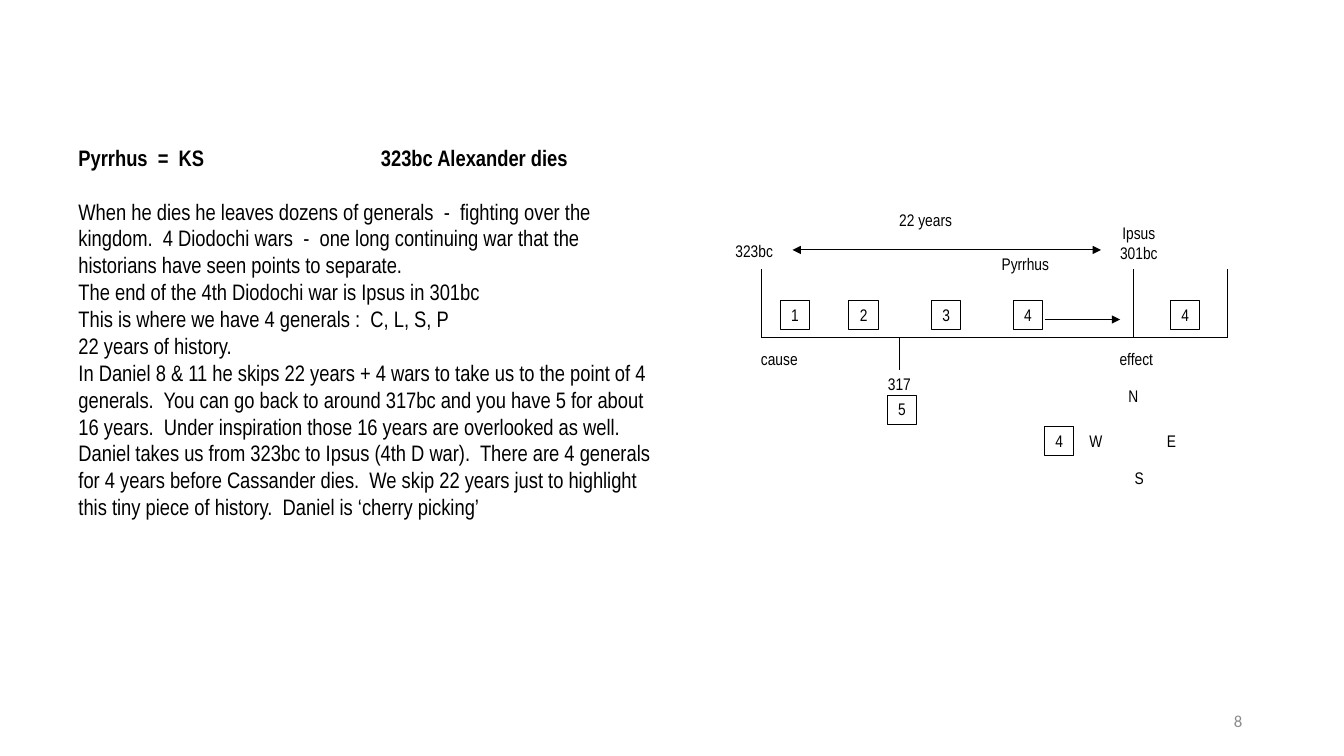
from dataclasses import dataclass

from lxml import etree
from pptx import Presentation
from pptx import util as u
from pptx.dml.color import RGBColor
from pptx.enum import shapes, text
from pptx.oxml import ns


@dataclass(frozen=True)
class Theme:
    ink: str = "000000"
    muted: str = "8C8C8C"
    font: str = "Arial Narrow"
    number_font: str = "Calibri"
    body_size: float = 16
    label_size: float = 12
    line_width: float = 0.75
    inset: float = 0.04


THEME = Theme()
SLIDE_W, SLIDE_H = 13.33, 7.5
HEADING = "Pyrrhus  =  KS\t323bc Alexander dies"
NOTES = [
    "When he dies he leaves dozens of generals  -  fighting over the kingdom.  "
    "4 Diodochi wars  -  one long continuing war that the historians have seen "
    "points to separate.",
    "The end of the 4th Diodochi war is Ipsus in 301bc",
    "This is where we have 4 generals :  C, L, S, P",
    "22 years of history.",
    "In Daniel 8 & 11 he skips 22 years + 4 wars to take us to the point of "
    "4 generals.  You can go back to around 317bc and you have 5 for about 16 "
    "years.  Under inspiration those 16 years are overlooked as well.  Daniel "
    "takes us from 323bc to Ipsus (4th D war).  There are 4 generals for 4 years "
    "before Cassander dies.  We skip 22 years just to highlight this tiny piece "
    "of history.  Daniel is ‘cherry picking’",
]


def style(paragraph, size, color=THEME.ink, name=THEME.font, bold=False):
    paragraph.font.color.rgb = RGBColor.from_string(color)
    for key, value in {"size": u.Pt(size), "name": name, "bold": bold}.items():
        setattr(paragraph.font, key, value)


def add_text_box(slide, box):
    frame = slide.shapes.add_textbox(*map(u.Inches, box)).text_frame
    frame.word_wrap = True
    return frame


def add_notes(slide, box):
    frame = add_text_box(slide, box)
    frame.text = "\n".join([HEADING, *NOTES])
    heading, first_note = frame.paragraphs[:2]
    # Second heading starts halfway across the column
    tabs = etree.SubElement(heading._p.get_or_add_pPr(), ns.qn("a:tabLst"))
    etree.SubElement(tabs, ns.qn("a:tab"), pos=str(u.Inches(3)), algn="l")
    for paragraph in frame.paragraphs:
        style(paragraph, THEME.body_size, bold=paragraph is heading)
    style(heading, THEME.body_size, bold=True)
    first_note.space_before = u.Pt(19.2)


def add_timeline(slide, box):
    """Place the timeline on a grid of 50 columns by 28.5 rows."""
    left, top, width, height = box
    col, row = width / 50, height / 28.5

    def place(x, y):
        return u.Inches(left + x * col), u.Inches(top + y * row)

    def size(w, h):
        return u.Inches(w * col), u.Inches(h * row)

    def write(frame, words):
        frame.word_wrap = True
        frame.vertical_anchor = text.MSO_ANCHOR.TOP
        for side in ("left", "top", "right", "bottom"):
            setattr(frame, f"margin_{side}", u.Inches(THEME.inset))
        frame.text = words
        for paragraph in frame.paragraphs:
            paragraph.alignment = text.PP_ALIGN.CENTER
            style(paragraph, THEME.label_size)

    def label(words, x, y, w, h):
        write(slide.shapes.add_textbox(*place(x, y), *size(w, h)).text_frame, words)

    def count_box(number, x, y):
        square = slide.shapes.add_shape(
            shapes.MSO_SHAPE.RECTANGLE, *place(x, y), *size(2.9, 2.9))
        square.shadow.inherit = False
        square.fill.background()
        square.line.color.rgb = RGBColor.from_string(THEME.ink)
        square.line.width = u.Pt(THEME.line_width)
        write(square.text_frame, str(number))

    def line(x1, y1, x2, y2, *arrowheads):
        stroke = slide.shapes.add_connector(
            shapes.MSO_CONNECTOR.STRAIGHT, *place(x1, y1), *place(x2, y2))
        stroke.line.color.rgb = RGBColor.from_string(THEME.ink)
        stroke.line.width = u.Pt(THEME.line_width)
        for end in arrowheads:
            etree.SubElement(stroke.line._get_or_add_ln(), ns.qn(f"a:{end}"),
                             type="triangle")
        etree.SubElement(stroke._element.spPr, ns.qn("a:effectLst"))

    # Axis with its uprights and the 317 branch
    start, ipsus, finish = 3.8, 40.7, 50
    upright_top, axis = 6.3, 13.1
    line(start, axis, finish, axis)
    for x in (start, ipsus, finish):
        line(x, upright_top, x, axis)
    line(17.5, axis, 17.5, 16.3)

    # Span of 22 years and the move to Ipsus
    line(6.9, 4.4, 37.5, 4.4, "headEnd", "tailEnd")
    line(31.9, 11.3, 39.4, 11.3, "tailEnd")

    # Names and dates
    for words, *area in [
        ("323bc", 0, 3.1, 6.2, 3.1),
        ("Ipsus\n301bc", 37.5, 1.3, 7.5, 5),
        ("22 years", 15.7, 0, 8.8, 3.9),
        ("Pyrrhus", 26.3, 4.4, 7.4, 2.5),
        ("cause", 1.9, 13.8, 7.4, 2.5),
        ("effect", 38.2, 13.8, 5.6, 2.5),
        ("317", 13.8, 16.3, 7.4, 2.5),
    ]:
        label(words, *area)

    # Wars along the axis, then the counts of generals
    for number, x in [(1, 5.7), (2, 12.5), (3, 20.7), (4, 28.8), (4, 44.4)]:
        count_box(number, x, 9.4)
    count_box(5, 16.3, 18.8)
    count_box(4, 31.9, 21.9)

    # Compass points
    for point, x, y in [("N", 39.4, 17.5), ("E", 43.2, 21.9),
                        ("W", 35.7, 21.9), ("S", 40, 25.6)]:
        label(point, x, y, 2.6, 2.7)


def add_page_number(slide, box, number):
    frame = add_text_box(slide, box)
    frame.vertical_anchor = text.MSO_ANCHOR.MIDDLE
    frame.text = str(number)
    paragraph = frame.paragraphs[0]
    paragraph.alignment = text.PP_ALIGN.RIGHT
    style(paragraph, THEME.label_size, THEME.muted, THEME.number_font)


def main():
    deck = Presentation()
    deck.slide_width, deck.slide_height = u.Inches(SLIDE_W), u.Inches(SLIDE_H)
    slide = deck.slides.add_slide(deck.slide_layouts[6])
    add_page_number(slide, (9.42, 6.95, 3, 0.4), 8)
    add_notes(slide, (0.68, 1.38, 5.88, 4.07))
    add_timeline(slide, (7.17, 2.04, 5, 2.85))
    deck.save("out.pptx")


if __name__ == "__main__":
    main()
